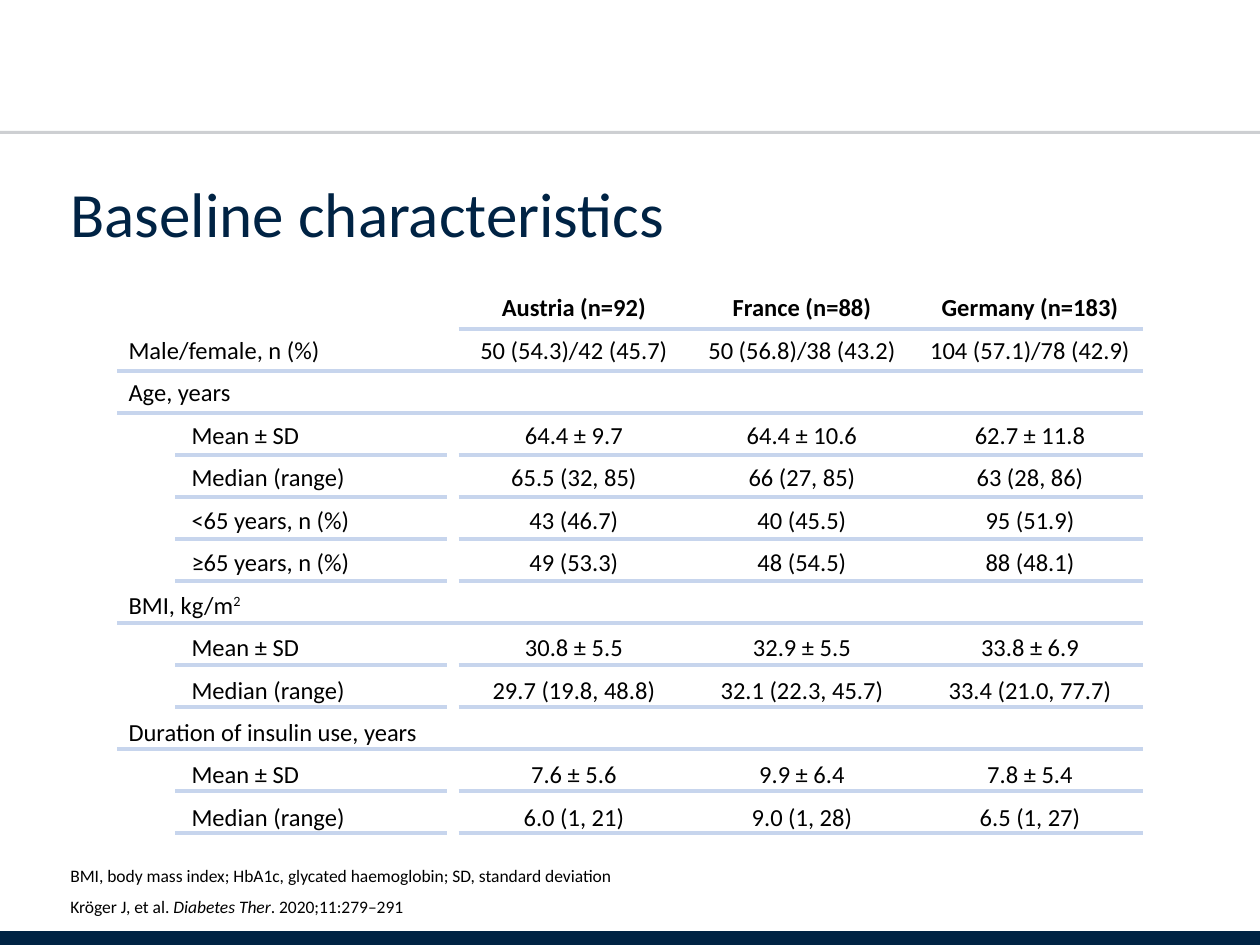
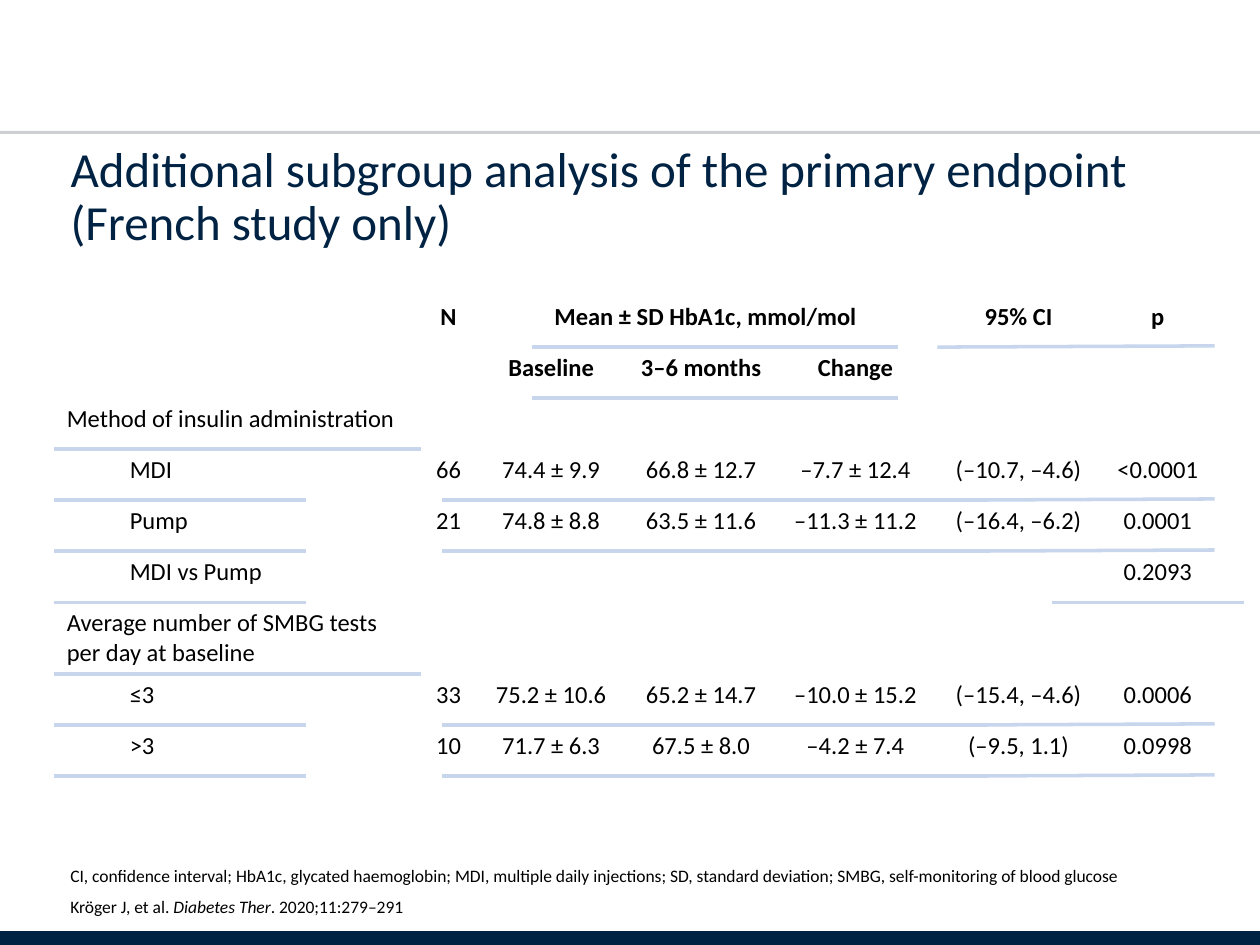
from itertools import accumulate

from lxml.etree import SubElement
from pptx import Presentation
from pptx.dml.color import RGBColor
from pptx.enum.shapes import MSO_CONNECTOR as Link
from pptx.enum.text import MSO_ANCHOR as Anchor, MSO_AUTO_SIZE as Fit, PP_ALIGN as Align
from pptx.oxml.ns import qn
from pptx.util import Inches, Pt

NAVY = RGBColor(0x00, 0x23, 0x44)
GREY = RGBColor(0x9D, 0xA1, 0xA6)
PALE = RGBColor(0xC7, 0xD5, 0xED)
BLACK = RGBColor(0, 0, 0)
FONT = "Calibri"
COLS, ROWS = 100, 75
CITE = [("Kröger J, et al. ", ""), ("Diabetes Ther", "italic"), (". 2020;11:279–291", "")]

# Each table row: label level, label, values
BASE = [
    (0, "", "Austria (n=92)", "France (n=88)", "Germany (n=183)"),
    (0, "Male/female, n (%)", "50 (54.3)/42 (45.7)", "50 (56.8)/38 (43.2)", "104 (57.1)/78 (42.9)"),
    (0, "Age, years"),
    (1, "Mean ± SD", "64.4 ± 9.7", "64.4 ± 10.6", "62.7 ± 11.8"),
    (1, "Median (range)", "65.5 (32, 85)", "66 (27, 85)", "63 (28, 86)"),
    (1, "<65 years, n (%)", "43 (46.7)", "40 (45.5)", "95 (51.9)"),
    (1, "≥65 years, n (%)", "49 (53.3)", "48 (54.5)", "88 (48.1)"),
    (0, [("BMI, kg/m", ""), ("2", "super")]),
    (1, "Mean ± SD", "30.8 ± 5.5", "32.9 ± 5.5", "33.8 ± 6.9"),
    (1, "Median (range)", "29.7 (19.8, 48.8)", "32.1 (22.3, 45.7)", "33.4 (21.0, 77.7)"),
    (0, "Duration of insulin use, years"),
    (1, "Mean ± SD", "7.6 ± 5.6", "9.9 ± 6.4", "7.8 ± 5.4"),
    (1, "Median (range)", "6.0 (1, 21)", "9.0 (1, 28)", "6.5 (1, 27)"),
]
GROUPS = [
    (0, "", "N", "Mean ± SD HbA1c, mmol/mol", "", "", "95% CI", "p"),
    (0, "", "", "Baseline", "3–6 months", "Change"),
    (0, "Method of insulin administration"),
    (1, "MDI", "66", "74.4 ± 9.9", "66.8 ± 12.7", "–7.7 ± 12.4", "(–10.7, –4.6)", "<0.0001"),
    (1, "Pump", "21", "74.8 ± 8.8", "63.5 ± 11.6", "–11.3 ± 11.2", "(–16.4, –6.2)", "0.0001"),
    (1, "MDI vs Pump", "", "", "", "", "", "0.2093"),
    (0, "Average number of SMBG tests per day at baseline"),
    (1, "≤3", "33", "75.2 ± 10.6", "65.2 ± 14.7", "–10.0 ± 15.2", "(–15.4, –4.6)", "0.0006"),
    (1, ">3", "10", "71.7 ± 6.3", "67.5 ± 8.0", "–4.2 ± 7.4", "(–9.5, 1.1)", "0.0998"),
]


class Deck:
    """Holds the style and the current slide; lengths are grid columns and rows."""

    def __init__(self):
        self.prs = Presentation()
        self.prs.slide_width, self.prs.slide_height = Inches(10), Inches(7.5)
        self.slide = None

    def x(self, cols):
        return round(self.prs.slide_width * cols / COLS)

    def y(self, rows):
        return round(self.prs.slide_height * rows / ROWS)

    def box(self, left, top, width, height):
        return self.x(left), self.y(top), self.x(width), self.y(height)

    def say(self, par, text, size, color=BLACK, bold=False):
        """Add a string, or a list of (text, kind) runs, to a paragraph."""
        for part, kind in [(text, "")] if isinstance(text, str) else text:
            run = par.add_run()
            run.text = part
            font = run.font
            font.name, font.size, font.bold = FONT, Pt(size), bold
            font.color.rgb = color
            if kind == "italic":
                font.italic = True
            elif kind == "super":
                run._r.get_or_add_rPr().set("baseline", "30000")

    def line(self, left, right, y, color=PALE, width=2, rise=0, alpha=None):
        link = self.slide.shapes.add_connector(
            Link.STRAIGHT, self.x(left), self.y(y), self.x(right), self.y(y - rise))
        link.line.color.rgb, link.line.width = color, Pt(width)
        props = link._element.spPr
        if alpha:
            tint = next(props.iter(qn("a:srgbClr")))
            SubElement(tint, qn("a:alpha"), val=str(alpha * 1000))
        SubElement(props, qn("a:effectLst"))

    def page(self, title, size, note):
        """Start a slide with its bands, title and footnotes."""
        self.slide = self.prs.slides.add_slide(self.prs.slide_layouts[5])
        self.line(0, COLS, 74.6, NAVY, 10)
        self.line(0, COLS, 10.5, GREY, 1.75, alpha=50)
        head = self.slide.shapes.title
        head.left, head.top, head.width, head.height = self.box(4.6, 12.5, 91.3, 7.4)
        frame = head.text_frame
        frame.auto_size, frame.word_wrap = Fit.NONE, True
        frame.vertical_anchor = Anchor.BOTTOM
        frame.margin_left = frame.margin_right = Inches(0.1)
        frame.margin_top, frame.margin_bottom = Inches(0.05), 0
        par = frame.paragraphs[0]
        par.alignment, par.line_spacing = Align.LEFT, 0.9
        self.say(par, title, size, NAVY)
        self.notes(note, CITE)

    def notes(self, *texts):
        frame = self.slide.shapes.add_textbox(*self.box(4.6, 70.3, 91.3, 3)).text_frame
        frame.auto_size, frame.word_wrap = Fit.NONE, True
        frame.vertical_anchor = Anchor.BOTTOM
        for i, text in enumerate(texts):
            par = frame.add_paragraph() if i else frame.paragraphs[0]
            par.space_after = Pt(6)
            self.say(par, text, 10)

    def table(self, left, top, widths, heights, data, heads=1, spans=()):
        """Draw a plain table and return the y of every row edge."""
        shape = self.slide.shapes.add_table(
            len(heights), len(widths), *self.box(left, top, sum(widths), sum(heights)))
        grid = shape.table
        grid.first_row = grid.horz_banding = False
        for col, width in zip(grid.columns, widths):
            col.width = self.x(width)
        for row, height in zip(grid.rows, heights):
            row.height = self.y(height)
        for start, end in spans:
            grid.cell(*start).merge(grid.cell(*end))
        for r, (level, *texts) in enumerate(data):
            texts += [""] * (len(widths) - len(texts))
            for c, text in enumerate(texts):
                cell = grid.cell(r, c)
                cell.fill.background()
                par = cell.text_frame.paragraphs[0]
                if c:
                    par.alignment = Align.CENTER
                elif level:
                    par.level = level
                    par._p.get_or_add_pPr().set("marL", str(Inches(0.5)))
                if text:
                    self.say(par, text, 14, bold=r < heads)
                else:
                    SubElement(par._p, qn("a:endParaRPr"), sz="1400")
        return list(accumulate(heights, initial=top))


def baseline(deck):
    deck.page("Baseline characteristics", 36,
              "BMI, body mass index; HbA1c, glycated haemoglobin; SD, standard deviation")
    first, wide = 27.3, 18.1
    edges = deck.table(9.2, 22.8, [first] + [wide] * 3, [43.3 / len(BASE)] * len(BASE), BASE)
    for r, (y, row) in enumerate(zip(edges[1:], BASE)):
        if r:
            deck.line(*((13.9, 35.5) if row[0] else (9.3, 36.4)), y)
        for c in range(3):
            start = 36.4 + c * wide
            deck.line(start, start + wide, y)


def subgroup(deck):
    deck.page("Additional subgroup analysis of the primary endpoint (French study only)", 28,
              "CI, confidence interval; HbA1c, glycated haemoglobin; MDI, multiple daily "
              "injections; SD, standard deviation; SMBG, self-monitoring of blood glucose")
    tall, slim = 5.7, 4.05
    spans = [((0, c), (1, c)) for c in (1, 5, 6)] + [((0, 2), (0, 4))]
    edges = deck.table(4.3, 23.5, [29.1, 4.4, 11.9, 11.9, 12.6, 13.3, 8.8],
                       [slim] * 6 + [tall] + [slim] * 2, GROUPS, 2, spans)
    rules = [
        (4.3, 33.4, 0, (3, 7)),
        (4.3, 24.3, 0, (4, 5, 6, 8, 9)),
        (42.2, 71.3, 0, (1, 2)),
        (35.1, 78.4, 0, (4, 5, 8, 9)),
        (74.4, 96.4, 0.1, (1, 4, 5, 8, 9)),
        (83.5, 98.7, 0, (6,)),
    ]
    for left, right, rise, rows in rules:
        for r in rows:
            deck.line(left, right, edges[r], rise=rise)


def main():
    deck = Deck()
    baseline(deck)
    subgroup(deck)
    deck.prs.save("out.pptx")


if __name__ == "__main__":
    main()
